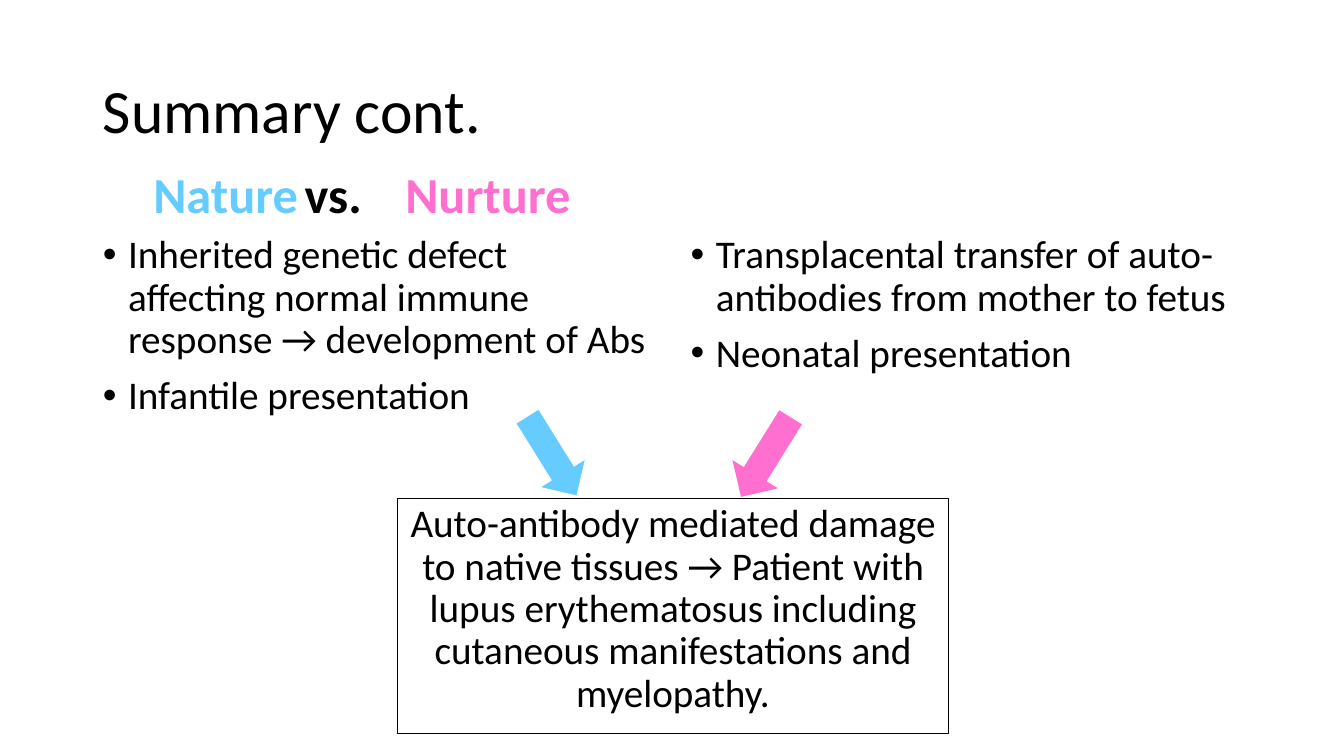
from dataclasses import dataclass

from lxml.etree import SubElement
from pptx import Presentation
from pptx.dml.color import RGBColor
from pptx.enum.shapes import MSO_SHAPE
from pptx.enum.text import MSO_ANCHOR, MSO_AUTO_SIZE, PP_ALIGN
from pptx.oxml.ns import qn
from pptx.util import Inches, Pt

COLORS = {"text": "000000", "nature": "66CCFF", "nurture": "FF6FCF", "edge": "FFFFFF"}
FONT = "Calibri"


@dataclass
class Box:
    left: float
    top: float
    width: float
    height: float

    def emu(self) -> tuple:
        return tuple(Inches(v) for v in (self.left, self.top, self.width, self.height))


@dataclass
class Column:
    idx: int
    box: Box
    points: list[str]


@dataclass
class Arrow:
    box: Box
    angle: float
    color: str
    edge: str | None = None


@dataclass
class Heading:
    text: str
    color: str
    center: float  # from the text edge of the heading row


COLUMNS = [
    Column(2, Box(0.92, 2.28, 5.64, 2.33), [
        "Inherited genetic defect affecting normal immune response → development of Abs",
        "Infantile presentation"]),
    Column(4, Box(6.75, 2.28, 5.67, 2.18), [
        "Transplacental transfer of auto-antibodies from mother to fetus",
        "Neonatal presentation"]),
]
HEADINGS = [
    Heading("Nature", "nature", 2.5),
    Heading("vs.", "text", 5.54),
    Heading("Nurture", "nurture", 8.68),
]
ARROWS = [
    Arrow(Box(7.13, 4.27, 0.93, 0.53), 180 - 58.1, "nurture"),
    Arrow(Box(5.01, 4.26, 0.93, 0.53), 58.1, "nature", "edge"),
]


def rgb(name: str) -> RGBColor:
    return RGBColor.from_string(COLORS[name])


def place(sp, box: Box, anchor=MSO_ANCHOR.TOP):
    """Position a shape and return its text frame, ready for text."""
    sp.left, sp.top, sp.width, sp.height = box.emu()
    tf = sp.text_frame
    tf.word_wrap = True
    tf.auto_size = MSO_AUTO_SIZE.NONE
    tf.vertical_anchor = anchor
    return tf


def add_run(p, text: str, *, size: float = 28, color: str = "text", bold: bool = False) -> None:
    r = p.add_run()
    r.text = text
    r.font.name, r.font.size, r.font.bold = FONT, Pt(size), bold
    r.font.color.rgb = rgb(color)


def format_paragraph(p, *, align=PP_ALIGN.LEFT, before: float = 10, bullet: bool = False):
    p.alignment = align
    p.line_spacing = 0.9
    p.space_before = Pt(before)
    pPr = p._p.get_or_add_pPr()
    indent = Inches(0.25) if bullet else 0
    pPr.set("marL", str(indent))
    pPr.set("indent", str(-indent))
    if bullet:
        SubElement(pPr, qn("a:buFont")).set("typeface", "Arial")
        SubElement(pPr, qn("a:buChar")).set("char", "•")
    else:
        SubElement(pPr, qn("a:buNone"))
    return pPr


def add_headings(sp) -> None:
    p = place(sp, Box(0.92, 1.38, 11.49, 0.9), MSO_ANCHOR.BOTTOM).paragraphs[0]
    tabs = SubElement(format_paragraph(p), qn("a:tabLst"))
    for h in HEADINGS:
        tab = SubElement(tabs, qn("a:tab"))
        tab.set("pos", str(Inches(h.center)))
        tab.set("algn", "ctr")
        add_run(p, "\t" + h.text, size=36, color=h.color, bold=True)


def add_column(sp, column: Column) -> None:
    tf = place(sp, column.box)
    for i, point in enumerate(column.points):
        p = tf.add_paragraph() if i else tf.paragraphs[0]
        format_paragraph(p, bullet=True)
        add_run(p, point)


def add_outcome(slide, text: str) -> None:
    box = Box(3.94, 4.95, 5.47, 2.33)
    sp = slide.shapes.add_shape(MSO_SHAPE.RECTANGLE, *box.emu())
    sp.shadow.inherit = False
    sp.fill.background()
    sp.line.color.rgb = rgb("text")
    sp.line.width = Pt(0.75)
    p = place(sp, box).paragraphs[0]
    format_paragraph(p, align=PP_ALIGN.CENTER)
    add_run(p, text)


def add_arrow(slide, arrow: Arrow) -> None:
    sp = slide.shapes.add_shape(MSO_SHAPE.RIGHT_ARROW, *arrow.box.emu())
    sp.shadow.inherit = False
    sp.rotation = arrow.angle
    sp.fill.solid()
    sp.fill.fore_color.rgb = rgb(arrow.color)
    if arrow.edge:
        sp.line.color.rgb = rgb(arrow.edge)
        sp.line.width = Pt(0.5)
    else:
        sp.line.fill.background()


def main() -> None:
    prs = Presentation()
    prs.slide_width, prs.slide_height = Inches(13.33), Inches(7.5)
    slide = prs.slides.add_slide(prs.slide_layouts[4])
    holders = {sp.placeholder_format.idx: sp for sp in slide.placeholders}

    # Title and heading row
    p = place(holders[0], Box(0.92, 0.4, 11.5, 1.45), MSO_ANCHOR.MIDDLE).paragraphs[0]
    format_paragraph(p, before=0)
    add_run(p, "Summary cont.", size=44)
    add_headings(holders[1])

    # The heading row spans both columns, so the second heading is not needed
    spare = holders[3].element
    spare.getparent().remove(spare)

    # Two lists
    for column in COLUMNS:
        add_column(holders[column.idx], column)

    # Shared outcome and the arrows into it
    add_outcome(slide, "Auto-antibody mediated damage to native tissues → Patient with lupus "
                       "erythematosus including cutaneous manifestations and myelopathy.")
    for arrow in ARROWS:
        add_arrow(slide, arrow)

    prs.save("out.pptx")


if __name__ == "__main__":
    main()
